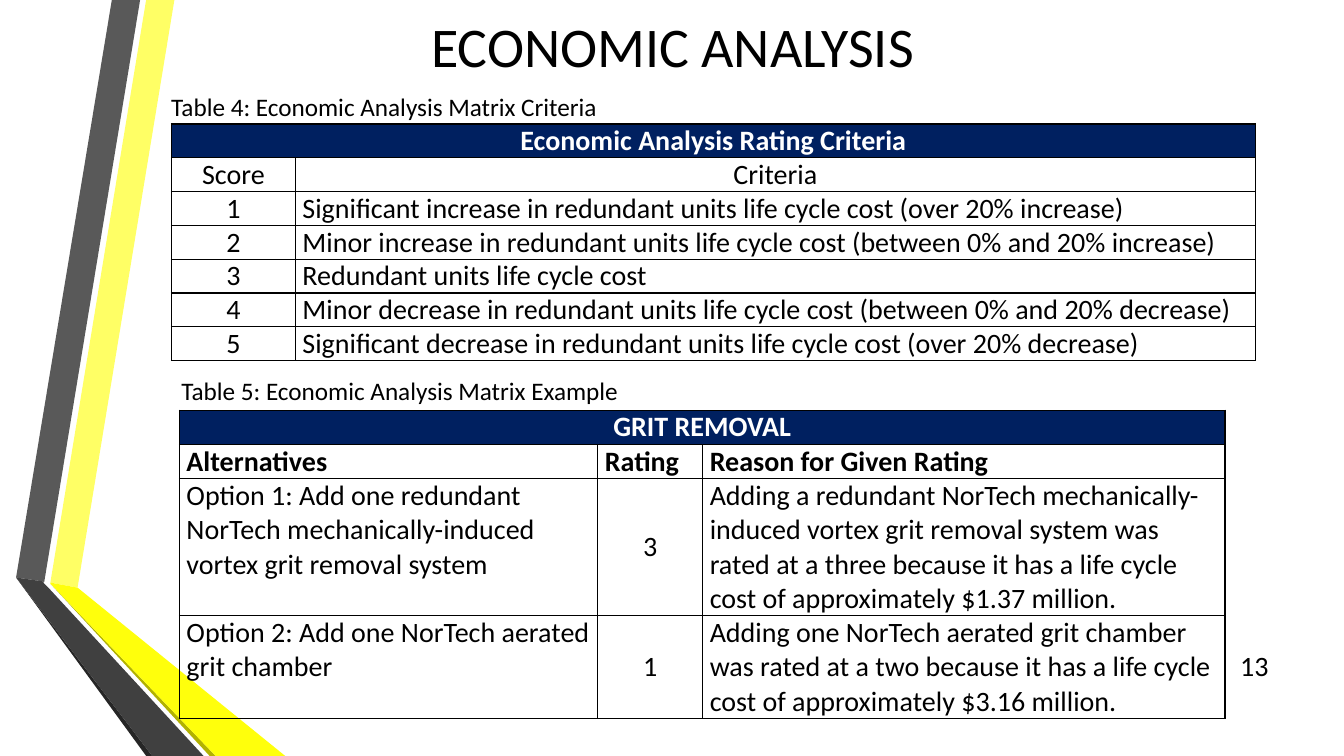
from lxml import etree
from pptx import Presentation
from pptx import util as u
from pptx.dml.color import RGBColor
from pptx.enum import text
from pptx.oxml.ns import qn

BLACK = RGBColor(0, 0, 0)
WHITE = RGBColor(255, 255, 255)
NAVY = RGBColor(0x00, 0x20, 0x60)
YELLOW = RGBColor(0xFF, 0xFF, 0x0C)
PALE_YELLOW = RGBColor(0xFF, 0xFF, 0x65)
OLIVE = RGBColor(0xB2, 0xB2, 0x00)
GREY = RGBColor(0x59, 0x59, 0x59)
DARK_GREY = RGBColor(0x40, 0x40, 0x40)
CHARCOAL = RGBColor(0x26, 0x26, 0x26)

FONT = "Calibri"
WIDTH, HEIGHT = 13.33, 7.5
LEFT, CENTER, RIGHT = text.PP_ALIGN.LEFT, text.PP_ALIGN.CENTER, text.PP_ALIGN.RIGHT
TOP, MIDDLE = text.MSO_ANCHOR.TOP, text.MSO_ANCHOR.MIDDLE

RIBBONS = [
    (PALE_YELLOW, [(0.5, 5.78), (0.77, 5.83), (1.73, 0), (1.45, 0)]),
    (GREY, [(1.39, 0), (1.11, 0), (0.16, 5.73), (0.44, 5.77)]),
    (CHARCOAL, [(0.16, 5.73), (1.45, HEIGHT), (1.51, HEIGHT)]),
    (OLIVE, [(0.5, 5.79), (2.08, HEIGHT), (2.14, HEIGHT)]),
    (YELLOW, [(0.5, 5.79), (2.14, HEIGHT), (2.83, HEIGHT), (0.77, 5.83), (0.5, 5.78)]),
    (DARK_GREY, [(2.02, HEIGHT), (0.48, 5.83), (0.43, 5.78), (0.44, 5.77),
                 (0.16, 5.73), (1.51, HEIGHT)]),
]

LABELS = [
    ("ECONOMIC ANALYSIS", (1.19, -0.51, 10.96, 1.92), 40, CENTER, MIDDLE),
    ("13", (12.08, 6.4, 0.6, 0.4), 20, RIGHT, MIDDLE),
    ("Table 5: Economic Analysis Matrix Example", (1.7, 3.67, 5.06, 0.4), 18, LEFT, TOP),
    ("Table 4: Economic Analysis Matrix Criteria", (1.6, 0.86, 5.06, 0.4), 18, LEFT, TOP),
]

EXAMPLE = {
    "corner": (1.78, 4.07),
    "columns": (4.15, 1.04, 5.18),
    "lines": (1, 1, 4, 3),
    "line_height": 0.34,
    "centered_column": 1,
    "heading_align": LEFT,
    "heading_bold": True,
    "title": "GRIT REMOVAL",
    "rows": [
        ("Alternatives", "Rating", "Reason for Given Rating"),
        ("Option 1: Add one redundant NorTech mechanically-induced vortex grit removal system",
         "3",
         "Adding a redundant NorTech mechanically-induced vortex grit removal system was "
         "rated at a three because it has a life cycle cost of approximately $1.37 million."),
        ("Option 2: Add one NorTech aerated grit chamber",
         "1",
         "Adding one NorTech aerated grit chamber was rated at a two because it has a "
         "life cycle cost of approximately $3.16 million."),
    ],
}

CRITERIA = {
    "corner": (1.7, 1.23),
    "columns": (1.23, 9.52),
    "lines": (1,) * 7,
    "line_height": 2.35 / 7,
    "centered_column": 0,
    "heading_align": CENTER,
    "heading_bold": False,
    "title": "Economic Analysis Rating Criteria",
    "rows": [
        ("Score", "Criteria"),
        ("1", "Significant increase in redundant units life cycle cost (over 20% increase)"),
        ("2", "Minor increase in redundant units life cycle cost (between 0% and 20% increase)"),
        ("3", "Redundant units life cycle cost"),
        ("4", "Minor decrease in redundant units life cycle cost (between 0% and 20% decrease)"),
        ("5", "Significant decrease in redundant units life cycle cost (over 20% decrease)"),
    ],
}


def write(frame, words, size, color, align, bold=False):
    paragraph = frame.paragraphs[0]
    paragraph.alignment = align
    run = paragraph.add_run()
    run.text = words
    for key, value in {"name": FONT, "size": u.Pt(size), "bold": bold}.items():
        setattr(run.font, key, value)
    run.font.color.rgb = color


def add_ribbon(slide, color, points):
    start, *rest = [(round(x * 100), round(y * 100)) for x, y in points]
    builder = slide.shapes.build_freeform(*start, scale=u.Inches(0.01))
    builder.add_line_segments(rest, close=True)
    ribbon = builder.convert_to_shape()
    ribbon.shadow.inherit = False
    ribbon.fill.solid()
    ribbon.fill.fore_color.rgb = color
    ribbon.line.fill.background()


def add_label(slide, words, box, size, align, anchor):
    frame = slide.shapes.add_textbox(*map(u.Inches, box)).text_frame
    frame.word_wrap = True
    frame.vertical_anchor = anchor
    write(frame, words, size, BLACK, align)


def add_borders(cell):
    properties = cell._tc.get_or_add_tcPr()
    for side in ("a:lnL", "a:lnR", "a:lnT", "a:lnB"):
        line = etree.SubElement(properties, qn(side), w=str(u.Pt(1)))
        fill = etree.SubElement(line, qn("a:solidFill"))
        etree.SubElement(fill, qn("a:srgbClr"), val=str(BLACK))


def add_matrix(slide, matrix):
    columns = matrix["columns"]
    heights = [lines * matrix["line_height"] for lines in matrix["lines"]]
    box = (*matrix["corner"], sum(columns), sum(heights))
    table = slide.shapes.add_table(len(heights), len(columns), *map(u.Inches, box)).table
    table.first_row = table.horz_banding = False
    for column, width in zip(table.columns, columns):
        column.width = u.Inches(width)
    for row, height in zip(table.rows, heights):
        row.height = u.Inches(height)
    margins = {"margin_left": 0.07, "margin_right": 0.07, "margin_top": 0, "margin_bottom": 0}
    for cell in table.iter_cells():
        for key, value in margins.items():
            setattr(cell, key, u.Inches(value))
        add_borders(cell)
        cell.fill.background()
    title = table.cell(0, 0)
    title.merge(table.cell(0, len(columns) - 1))
    title.fill.solid()
    title.fill.fore_color.rgb = NAVY
    write(title.text_frame, matrix["title"], 20, WHITE, CENTER, True)
    for r, entries in enumerate(matrix["rows"], 1):
        heading = r == 1
        for c, words in enumerate(entries):
            cell = table.cell(r, c)
            centered = c == matrix["centered_column"] and not heading
            align = matrix["heading_align"] if heading else CENTER if centered else LEFT
            cell.vertical_anchor = MIDDLE if centered else TOP
            write(cell.text_frame, words, 20, BLACK, align, heading and matrix["heading_bold"])


def main():
    """Build the economic analysis slide."""
    deck = Presentation()
    deck.slide_width, deck.slide_height = u.Inches(WIDTH), u.Inches(HEIGHT)
    slide = deck.slides.add_slide(deck.slide_layouts[6])
    for ribbon in RIBBONS:
        add_ribbon(slide, *ribbon)
    for label in LABELS:
        add_label(slide, *label)
    for matrix in (EXAMPLE, CRITERIA):
        add_matrix(slide, matrix)
    deck.save("out.pptx")


if __name__ == "__main__":
    main()
